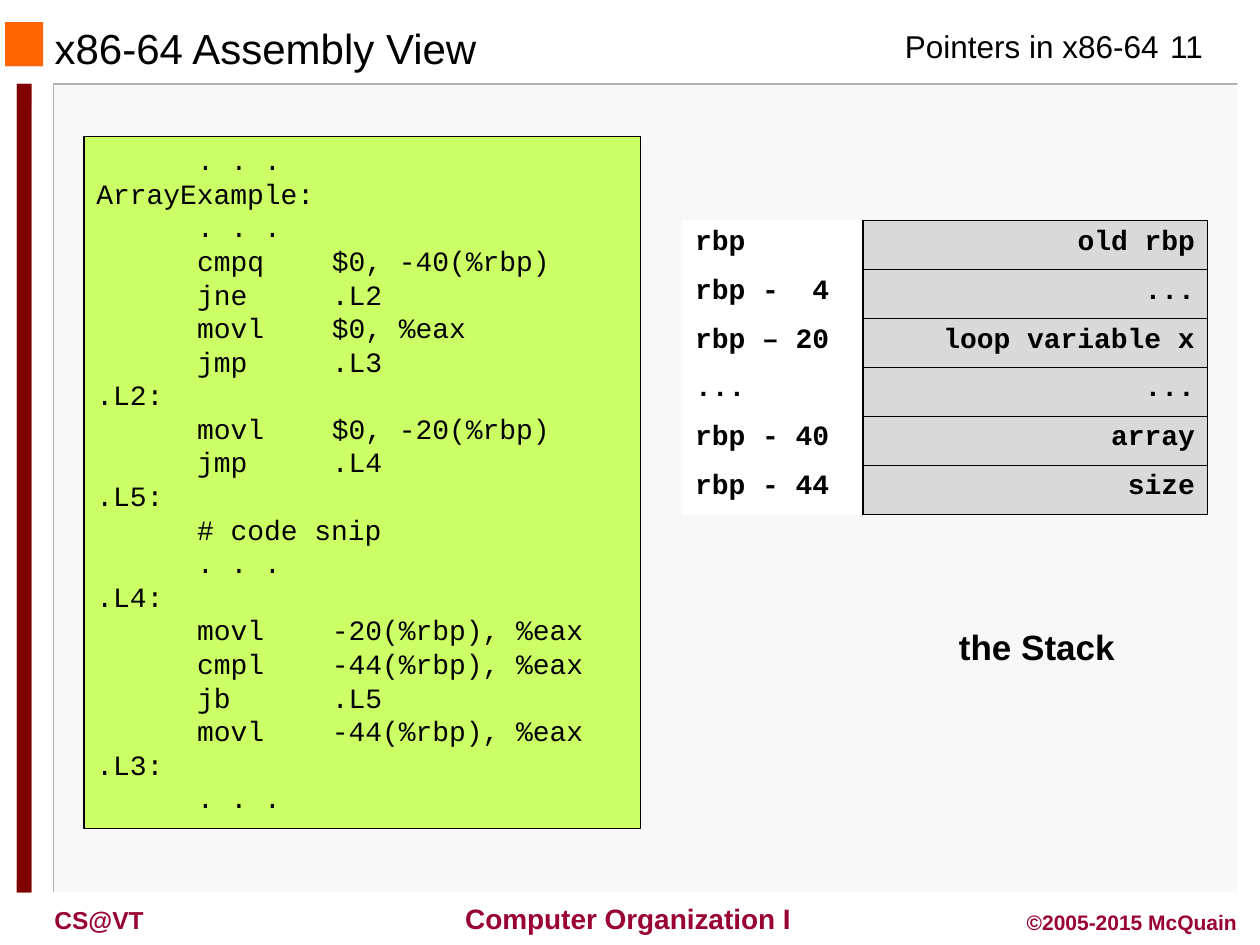
import pptx
import pptx.dml.color
import pptx.enum.shapes
import pptx.enum.text
import pptx.oxml
import pptx.oxml.ns
import pptx.util
from dataclasses import dataclass

ALIGN = pptx.enum.text.PP_ALIGN
ANCHOR = pptx.enum.text.MSO_ANCHOR
RECTANGLE = pptx.enum.shapes.MSO_SHAPE.RECTANGLE
COLUMNS, ROWS = 120, 90
CODE_TABS = (0.8, 1.87)

CODE = """\
\t. . .
ArrayExample:
\t. . .
\tcmpq\t$0, -40(%rbp)
\tjne\t.L2
\tmovl\t$0, %eax
\tjmp\t.L3
.L2:
\tmovl\t$0, -20(%rbp)
\tjmp\t.L4
.L5:
\t# code snip
\t. . .
.L4:
\tmovl\t-20(%rbp), %eax
\tcmpl\t-44(%rbp), %eax
\tjb\t.L5
\tmovl\t-44(%rbp), %eax
.L3:
\t. . ."""

STACK = [
    ("rbp", "old rbp"),
    ("rbp -  4", "..."),
    ("rbp – 20", "loop variable x"),
    ("...", "..."),
    ("rbp - 40", "array"),
    ("rbp - 44", "size"),
]


@dataclass(frozen=True)
class Theme:
    sans: str = "Arial"
    mono: str = "Courier New"
    ink: str = "000000"
    paper: str = "FFFFFF"
    panel: str = "F8F8F8"
    panel_edge: str = "B2B2B2"
    accent: str = "FF6600"
    bar: str = "800000"
    footer: str = "990033"
    code: str = "CCFF66"
    cell: str = "D9D9D9"
    title_size: int = 24
    label_size: int = 20
    header_size: int = 18
    body_size: int = 16
    mark_size: int = 14
    credit_size: int = 12


def rgb(color):
    return pptx.dml.color.RGBColor.from_string(color)


class SlideBuilder:
    """Places elements by (column, row, columns wide, rows high)."""

    def __init__(self, presentation, theme):
        self.theme = theme
        self.unit_x = presentation.slide_width / COLUMNS
        self.unit_y = presentation.slide_height / ROWS
        self.slide = presentation.slides.add_slide(presentation.slide_layouts[5])
        self.shapes = self.slide.shapes

    def lengths(self, box):
        left, top, width, height = box
        return (round(left * self.unit_x), round(top * self.unit_y),
                round(width * self.unit_x), round(height * self.unit_y))

    def fill_text(self, frame, text, size, align=ALIGN.LEFT, **font):
        values = {"name": self.theme.sans, "bold": False, "color": self.theme.ink,
                  "size": pptx.util.Pt(size), **font}
        color = rgb(values.pop("color"))
        for index, line in enumerate(text.split("\n")):
            paragraph = frame.paragraphs[0] if index == 0 else frame.add_paragraph()
            paragraph.alignment = align
            run = paragraph.add_run()
            run.text = line
            for name, value in values.items():
                setattr(run.font, name, value)
            run.font.color.rgb = color

    def title(self, box, text):
        shape = self.shapes.title
        shape.left, shape.top, shape.width, shape.height = self.lengths(box)
        frame = shape.text_frame
        frame.auto_size = pptx.enum.text.MSO_AUTO_SIZE.NONE
        frame.vertical_anchor = ANCHOR.MIDDLE
        self.fill_text(frame, text, self.theme.title_size)

    def text(self, box, text, size, wrap=True, anchor=ANCHOR.TOP, **style):
        frame = self.shapes.add_textbox(*self.lengths(box)).text_frame
        frame.word_wrap = wrap
        frame.vertical_anchor = anchor
        self.fill_text(frame, text, size, **style)

    def paint(self, shape, fill=None, line=None, weight=1):
        shape.shadow.inherit = False
        if fill:
            shape.fill.solid()
            shape.fill.fore_color.rgb = rgb(fill)
        else:
            shape.fill.background()
        if line:
            shape.line.color.rgb = rgb(line)
            shape.line.width = pptx.util.Pt(weight)
        else:
            shape.line.fill.background()

    def bevel(self, box, fill, edges=None):
        """Rectangle with upper-left and lower-right corners, as lines if edges are given."""
        left, top, width, height = self.lengths(box)
        right, bottom = left + width, top + height
        group = self.shapes.add_group_shape().shapes
        self.paint(group.add_shape(RECTANGLE, left, top, width, height), fill)
        for index, corner in enumerate([(left, top), (right, bottom)]):
            outline = group.build_freeform(right, top)
            outline.add_line_segments([corner, (left, bottom)], close=False)
            shape = outline.convert_to_shape()
            if edges:
                self.paint(shape, line=edges[index])
            else:
                self.paint(shape, fill)

    def code(self, box, text):
        shape = self.shapes.add_shape(RECTANGLE, *self.lengths(box))
        self.paint(shape, self.theme.code, self.theme.ink, 0.75)
        frame = shape.text_frame
        frame.word_wrap = True
        frame.vertical_anchor = ANCHOR.TOP
        self.fill_text(frame, text, self.theme.body_size, name=self.theme.mono)
        stops = "".join(f'<a:tab pos="{pptx.util.Inches(stop)}" algn="l"/>' for stop in CODE_TABS)
        for paragraph in frame.paragraphs:
            paragraph._p.get_or_add_pPr().append(pptx.oxml.parse_xml(
                f'<a:tabLst {pptx.oxml.ns.nsdecls("a")}>{stops}</a:tabLst>'))

    def border(self, cell, sides):
        properties = cell._tc.get_or_add_tcPr()
        for index, side in enumerate(sides):
            properties.insert(index, pptx.oxml.parse_xml(
                f'<a:ln{side} {pptx.oxml.ns.nsdecls("a")} w="12700"><a:solidFill>'
                f'<a:srgbClr val="{self.theme.ink}"/></a:solidFill></a:ln{side}>'))

    def table(self, box, rows, widths):
        theme = self.theme
        table = self.shapes.add_table(len(rows), len(widths), *self.lengths(box)).table
        table.first_row = table.horz_banding = False
        for column, width in zip(table.columns, widths):
            column.width = round(width * self.unit_x)
        formats = [(theme.paper, ALIGN.LEFT, "R"), (theme.cell, ALIGN.RIGHT, "LRTB")]
        for row, texts in enumerate(rows):
            for column, (fill, align, sides) in enumerate(formats):
                cell = table.cell(row, column)
                cell.fill.solid()
                cell.fill.fore_color.rgb = rgb(fill)
                self.border(cell, sides)
                self.fill_text(cell.text_frame, texts[column], theme.body_size, align,
                               name=theme.mono, bold=True)


def main():
    presentation = pptx.Presentation()
    presentation.slide_width = pptx.util.Inches(10)
    presentation.slide_height = pptx.util.Inches(7.5)
    theme = Theme()
    builder = SlideBuilder(presentation, theme)

    builder.bevel((5.1, 8, 112.8, 77), theme.panel, (theme.panel_edge, theme.paper))
    builder.bevel((0.5, 2.1, 3.6, 4.2), theme.accent)
    builder.bevel((1.6, 8, 1.4, 77), theme.bar)

    builder.title((4, 2.3, 76, 4.5), "x86-64 Assembly View")
    builder.text((85, 2, 26.9, 4.8), "Pointers in x86-64", theme.header_size, wrap=False)
    builder.text((109, 2, 8, 4.8), "11", theme.header_size, align=ALIGN.CENTER)

    footer = {"color": theme.footer, "bold": True}
    builder.text((4, 85.6, 18, 4), "CS@VT", theme.mark_size, **footer)
    builder.text((42, 85.3, 34.9, 4.4), " Computer Organization I", theme.body_size,
                 wrap=False, anchor=ANCHOR.MIDDLE, align=ALIGN.CENTER, **footer)
    builder.text((94, 86, 25, 3.6), "©2005-2015 McQuain", theme.credit_size,
                 align=ALIGN.RIGHT, **footer)

    builder.code((8, 13, 53, 65.9), CODE)
    builder.table((65, 21, 50, 28), STACK, (17.2, 32.8))
    builder.text((87, 59, 23.5, 5.3), "the Stack", theme.label_size,
                 align=ALIGN.CENTER, bold=True)

    presentation.save("out.pptx")


if __name__ == "__main__":
    main()
